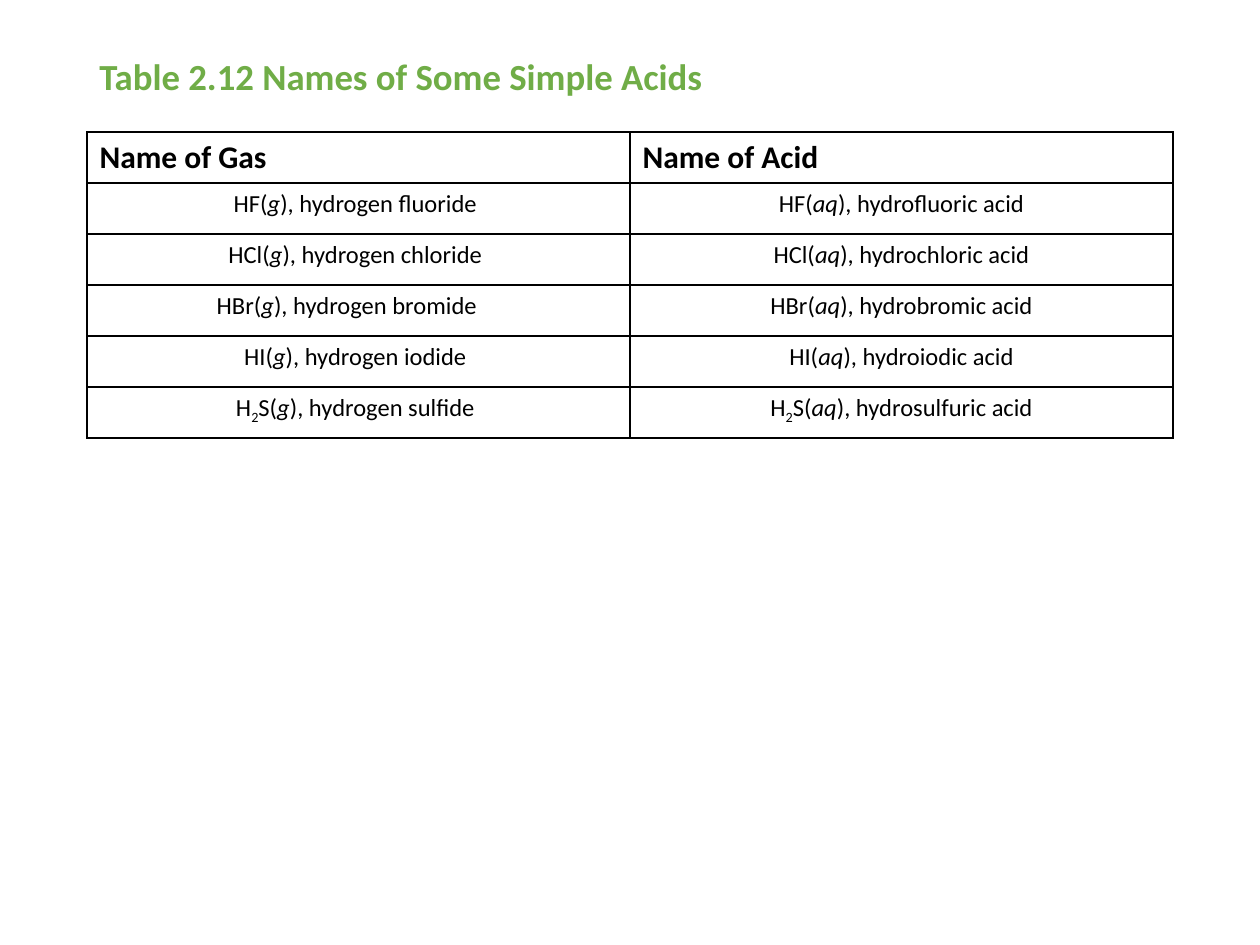
from dataclasses import dataclass

from lxml.etree import SubElement
from pptx import Presentation
from pptx.dml.color import RGBColor
from pptx.enum.text import MSO_ANCHOR, PP_ALIGN
from pptx.oxml.ns import qn
from pptx.util import Emu, Pt

PX_PER_INCH = 126


@dataclass(frozen=True)
class Theme:
    font: str = "Calibri"
    title_color: str = "70AD47"
    text_color: str = "000000"
    border_color: str = "000000"
    title_size: int = 21
    header_size: int = 18
    body_size: int = 14
    border_width: int = 1


@dataclass(frozen=True)
class Compound:
    formula: str
    gas: str
    acid: str
    gas_shift: int = 6  # extra right margin of the gas cell, px


THEME = Theme()
TITLE = "Table 2.12 Names of Some Simple Acids"
HEADERS = ("Name of Gas", "Name of Acid")
COMPOUNDS = (
    Compound("HF", "hydrogen fluoride", "hydrofluoric acid"),
    Compound("HCl", "hydrogen chloride", "hydrochloric acid"),
    Compound("HBr", "hydrogen bromide", "hydrobromic acid", gas_shift=23),
    Compound("HI", "hydrogen iodide", "hydroiodic acid"),
    Compound("H2S", "hydrogen sulfide", "hydrosulfuric acid"),
)
LEFT, WIDTH = 87, 1086
TITLE_TOP, TITLE_HEIGHT = 50, 58
TABLE_TOP, ROW_HEIGHT = 132, 51
CELL_MARGIN = 13


def px(n: int) -> Emu:
    return Emu(round(n * 914400 / PX_PER_INCH))


def style_run(r, size: int, color: str, bold: bool = False) -> None:
    r.font.name = THEME.font
    r.font.size = Pt(size)
    r.font.bold = bold
    r.font.color.rgb = RGBColor.from_string(color)


def add_run(p, text: str, italic: bool = False, subscript: bool = False) -> None:
    r = p.add_run()
    r.text = text
    style_run(r, THEME.body_size, THEME.text_color)
    r.font.italic = italic
    if subscript:
        r.font._element.set("baseline", "-25000")


def write_compound(p, formula: str, state: str, name: str) -> None:
    head, digit, tail = formula.partition("2")
    if digit:
        add_run(p, head)
        add_run(p, digit, subscript=True)
    add_run(p, (tail if digit else head) + "(")
    add_run(p, state, italic=True)
    add_run(p, f"), {name}")


def style_cell(cell) -> None:
    tc_pr = cell._tc.get_or_add_tcPr()
    for side in ("lnL", "lnR", "lnT", "lnB"):
        ln = SubElement(tc_pr, qn(f"a:{side}"), w=str(Pt(THEME.border_width)))
        fill = SubElement(ln, qn("a:solidFill"))
        SubElement(fill, qn("a:srgbClr"), val=THEME.border_color)
    cell.fill.background()
    cell.vertical_anchor = MSO_ANCHOR.TOP
    cell.text_frame.paragraphs[0].alignment = PP_ALIGN.CENTER


def add_title(s) -> None:
    sp = s.shapes.add_textbox(px(LEFT), px(TITLE_TOP), px(WIDTH), px(TITLE_HEIGHT))
    tf = sp.text_frame
    tf.word_wrap = True
    tf.vertical_anchor = MSO_ANCHOR.MIDDLE
    tf.text = TITLE
    p = tf.paragraphs[0]
    p.line_spacing = 0.9
    style_run(p.runs[0], THEME.title_size, THEME.title_color, bold=True)


def add_acid_table(s) -> None:
    rows = len(COMPOUNDS) + 1
    table = s.shapes.add_table(rows, len(HEADERS), px(LEFT), px(TABLE_TOP),
                               px(WIDTH), px(ROW_HEIGHT * rows)).table
    table.first_row = table.horz_banding = False
    for cell in table.iter_cells():
        style_cell(cell)

    # Header row
    for col, text in enumerate(HEADERS):
        tf = table.cell(0, col).text_frame
        tf.text = text
        style_run(tf.paragraphs[0].runs[0], THEME.header_size, THEME.text_color, bold=True)

    # Each compound as gas and as acid
    for row, c in enumerate(COMPOUNDS, start=1):
        table.cell(row, 0).margin_right = px(CELL_MARGIN + c.gas_shift)
        for col, (state, name) in enumerate((("g", c.gas), ("aq", c.acid))):
            p = table.cell(row, col).text_frame.paragraphs[0]
            write_compound(p, c.formula, state, name)


def main() -> None:
    prs = Presentation()
    prs.slide_width, prs.slide_height = px(1260), px(945)
    s = prs.slides.add_slide(prs.slide_layouts[6])
    add_title(s)
    add_acid_table(s)
    prs.save("out.pptx")


if __name__ == "__main__":
    main()
